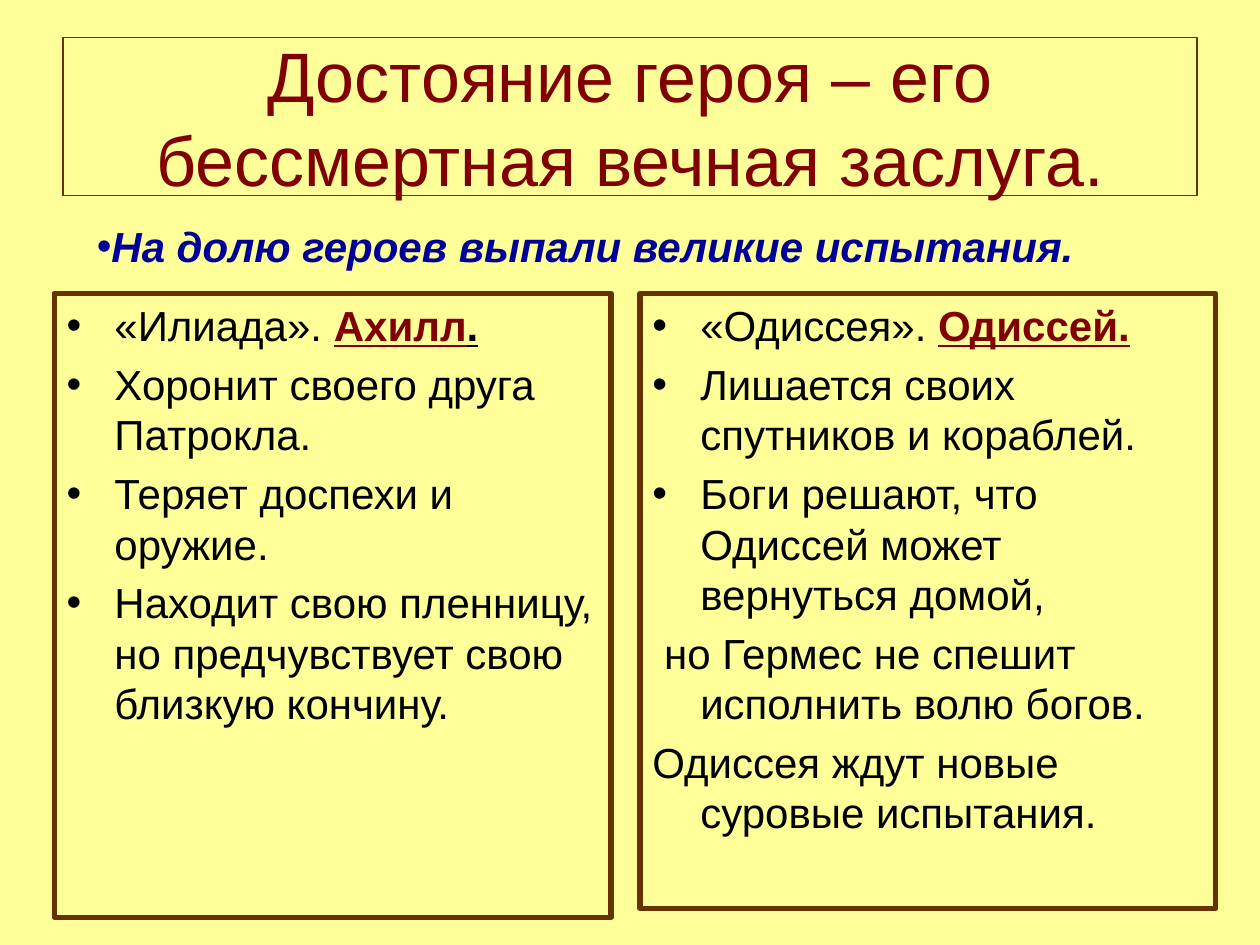
from dataclasses import dataclass

from lxml import etree
from pptx import Presentation
from pptx import util as u
from pptx.dml.color import RGBColor
from pptx.enum import shapes, text
from pptx.oxml.ns import qn

PX = 9144  # EMU per px, 100 px to the inch
FONT = "Arial"
PALE_YELLOW = RGBColor(0xFF, 0xFF, 0x99)
BROWN = RGBColor(0x66, 0x33, 0x00)
MAROON = RGBColor(0x80, 0x00, 0x00)
NAVY = RGBColor(0x00, 0x00, 0x99)
BLACK = RGBColor(0x00, 0x00, 0x00)
HANGING = 38


@dataclass(frozen=True)
class Run:
    text: str
    color: RGBColor = BLACK
    size: int = 24
    bold: bool = False
    italic: bool = False
    underline: bool = False


@dataclass(frozen=True)
class Para:
    runs: tuple[Run, ...]
    bullet: bool = True
    hanging: int = HANGING
    before: float = 4.8
    align: text.PP_ALIGN = text.PP_ALIGN.LEFT


@dataclass(frozen=True)
class Box:
    left: int
    top: int
    width: int
    height: int
    paras: tuple[Para, ...]
    border: float = 0
    anchor: text.MSO_ANCHOR = text.MSO_ANCHOR.TOP


def item(words: str, bullet: bool = True) -> Para:
    return Para((Run(words),), bullet)


def hero(words: str, color: RGBColor = MAROON) -> Run:
    return Run(words, color, bold=True, underline=True)


BOXES = (
    Box(50, 30, 900, 125, (
        Para((Run("Достояние героя – его бессмертная вечная заслуга.", MAROON, 40),),
             bullet=False, hanging=0, before=0, align=text.PP_ALIGN.CENTER),
    ), border=0.75, anchor=text.MSO_ANCHOR.MIDDLE),
    Box(43, 233, 442, 495, (
        Para((Run("«Илиада». "), hero("Ахилл"), hero(".", BLACK))),
        item("Хоронит своего друга Патрокла."),
        item("Теряет доспехи и оружие."),
        item("Находит свою пленницу, но предчувствует свою близкую кончину."),
    ), border=3),
    Box(508, 233, 457, 488, (
        Para((Run("«Одиссея». "), hero("Одиссей."))),
        item("Лишается своих спутников и кораблей."),
        item("Боги решают, что Одиссей может вернуться домой,"),
        item(" но Гермес не спешит исполнить волю богов.", bullet=False),
        item("Одиссея ждут новые суровые испытания.", bullet=False),
    ), border=3),
    Box(67, 170, 906, 95, (
        Para((Run("На долю героев выпали великие испытания.", NAVY, bold=True, italic=True),),
             hanging=0),
    )),
)


def write_para(p, para: Para) -> None:
    p.alignment = para.align
    p.space_before = u.Pt(para.before)
    pPr = p._p.get_or_add_pPr()
    pPr.set("marL", str(para.hanging * PX))
    pPr.set("indent", str(-para.hanging * PX))
    if para.bullet:
        etree.SubElement(pPr, qn("a:buFont"), typeface=FONT)
        etree.SubElement(pPr, qn("a:buChar"), char="•")
    else:
        etree.SubElement(pPr, qn("a:buNone"))
    for run in para.runs:
        r = p.add_run()
        r.text = run.text
        r.font.name = FONT
        r.font.size = u.Pt(run.size)
        r.font.color.rgb = run.color
        r.font.bold = run.bold
        r.font.italic = run.italic
        r.font.underline = run.underline


def draw_box(slide, box: Box) -> None:
    """Add a rectangle, or a text box when there is no border, with its text."""
    place = [n * PX for n in (box.left, box.top, box.width, box.height)]
    if box.border:
        sp = slide.shapes.add_shape(shapes.MSO_SHAPE.RECTANGLE, *place)
        sp.shadow.inherit = False
        sp.fill.background()
        sp.line.color.rgb = BROWN
        sp.line.width = u.Pt(box.border)
    else:
        sp = slide.shapes.add_textbox(*place)
    tf = sp.text_frame
    tf.word_wrap = True
    tf.vertical_anchor = box.anchor
    for i, para in enumerate(box.paras):
        write_para(tf.add_paragraph() if i else tf.paragraphs[0], para)


def main() -> None:
    prs = Presentation()
    prs.slide_width, prs.slide_height = 1000 * PX, 750 * PX
    slide = prs.slides.add_slide(prs.slide_layouts[6])
    slide.background.fill.solid()
    slide.background.fill.fore_color.rgb = PALE_YELLOW
    for box in BOXES:
        draw_box(slide, box)
    prs.save("out.pptx")


if __name__ == "__main__":
    main()
